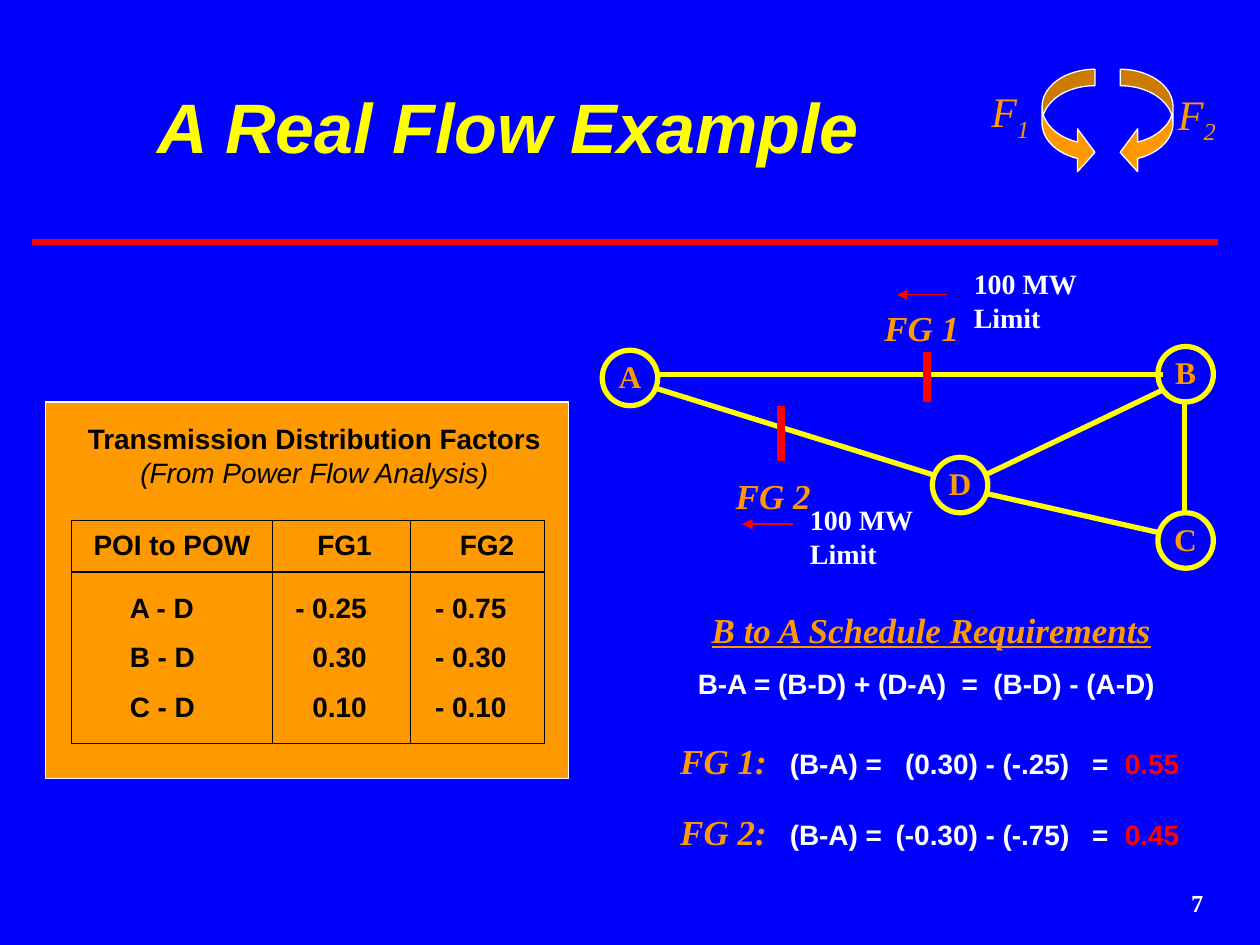
"""Build the slide "A Real Flow Example": network diagram, factor table and schedule equations."""
import dataclasses
import pptx
import pptx.util
import pptx.dml.color
import pptx.enum.shapes
import pptx.enum.text
import pptx.oxml
import pptx.oxml.ns

PX = 9144
SHAPE = pptx.enum.shapes.MSO_SHAPE
ANCHOR = pptx.enum.text.MSO_ANCHOR
LEFT, CENTER, RIGHT = (pptx.enum.text.PP_ALIGN.LEFT, pptx.enum.text.PP_ALIGN.CENTER,
                       pptx.enum.text.PP_ALIGN.RIGHT)
NS = pptx.oxml.ns.nsdecls("a")
RGB = pptx.dml.color.RGBColor.from_string


@dataclasses.dataclass(frozen=True)
class Theme:
    blue: str = "0000FF"
    yellow: str = "FFFF00"
    orange: str = "FF9900"
    red: str = "FF0000"
    white: str = "FFFFFF"
    black: str = "000000"
    sans: str = "Arial"
    serif: str = "Times New Roman"
    title: int = 40
    symbol: int = 24
    heading: int = 20
    node: int = 18
    body: int = 16
    number: int = 14


T = Theme()
# Each style is font, size, colour, then b, i, u or s for bold, italic, underline, subscript
TITLE = (T.sans, T.title, T.yellow, "bi")
SYMBOL = (T.serif, T.symbol, T.orange, "i")
SUBSCRIPT = (T.serif, T.symbol, T.orange, "is")
GATE = (T.serif, T.heading, T.orange, "bi")
HEADING = (T.serif, T.heading, T.orange, "biu")
NODE = (T.serif, T.node, T.orange, "b")
LIMIT = (T.serif, T.body, T.white, "b")
NUMBER = (T.serif, T.number, T.white, "b")
TABLE = (T.sans, T.body, T.black, "b")
SOURCE = (T.sans, T.body, T.black, "i")
EQUATION = (T.sans, T.body, T.white, "b")
RESULT = (T.sans, T.body, T.red, "b")


def write(tf, align, *paragraphs):
    for n, runs in enumerate(paragraphs):
        p = tf.add_paragraph() if n else tf.paragraphs[0]
        p.alignment = align
        for text, (font, size, color, flags) in runs:
            r = p.add_run()
            r.text = text
            r.font.name, r.font.size = font, pptx.util.Pt(size)
            r.font.color.rgb = RGB(color)
            r.font.bold, r.font.italic = "b" in flags, "i" in flags
            if "u" in flags:
                r.font.underline = True
            if "s" in flags:
                r.font._element.set("baseline", "-25000")


def line(x1, y1, x2, y2, color, width, arrow=False):
    c = s.shapes.add_connector(pptx.enum.shapes.MSO_CONNECTOR.STRAIGHT,
                               x1 * PX, y1 * PX, x2 * PX, y2 * PX)
    c.line.color.rgb, c.line.width = RGB(color), pptx.util.Pt(width)
    if arrow:
        c.line._get_or_add_ln().append(pptx.oxml.parse_xml(f'<a:tailEnd {NS} type="triangle"/>'))
    c._element.spPr.append(pptx.oxml.parse_xml(f"<a:effectLst {NS}/>"))


prs = pptx.Presentation()
prs.slide_width, prs.slide_height = 1000 * PX, 750 * PX
s = prs.slides.add_slide(prs.slide_layouts[5])
s.background.fill.solid()
s.background.fill.fore_color.rgb = RGB(T.blue)

title = s.shapes.title
title.left, title.top, title.width, title.height = 41 * PX, 22 * PX, 725 * PX, 155 * PX
title.text_frame.vertical_anchor = ANCHOR.MIDDLE
write(title.text_frame, CENTER, [("A Real Flow Example", TITLE)])
line(25, 192, 967, 192, T.red, 3)

solids = [
    (SHAPE.CURVED_RIGHT_ARROW, 827, 55, 42, 83, T.orange, T.white, 0.75, ""),
    (SHAPE.CURVED_LEFT_ARROW, 889, 55, 42, 83, T.orange, T.white, 0.75, ""),
    (SHAPE.RECTANGLE, 36, 319, 415, 299, T.orange, T.white, 0.75, ""),
]
for name, x, y in [("A", 478, 278), ("C", 919, 407), ("B", 919, 275), ("D", 740, 363)]:
    solids.append((SHAPE.OVAL, x, y, 44, 44, T.blue, T.yellow, 3, name))
for kind, x, y, w, h, fill, edge, width, name in solids:
    sp = s.shapes.add_shape(kind, x * PX, y * PX, w * PX, h * PX)
    sp.shadow.inherit = False
    sp.fill.solid()
    sp.fill.fore_color.rgb = RGB(fill)
    sp.line.color.rgb, sp.line.width = RGB(edge), pptx.util.Pt(width)
    if kind in (SHAPE.CURVED_RIGHT_ARROW, SHAPE.CURVED_LEFT_ARROW):
        for n, value in enumerate((0.31, 0.81, 0.33)):
            sp.adjustments[n] = value
    if name:
        tf = sp.text_frame
        tf.margin_left = tf.margin_right = tf.margin_top = 0
        tf.margin_bottom = 3 * PX
        tf.vertical_anchor = ANCHOR.MIDDLE
        write(tf, CENTER, [(name, NODE)])

for ends in [(523, 297, 923, 297), (520, 308, 741, 377), (784, 376, 924, 309),
             (940, 319, 940, 406), (784, 392, 921, 423)]:
    line(*ends, T.yellow, 3)
for x, top, bottom in [(620, 322, 366), (736, 279, 319)]:
    line(x, top, x, bottom, T.red, 4.5)
for x, y in [(752, 234), (629, 416)]:
    line(x, y, x - 40, y, T.red, 0.75, arrow=True)

limit = [[("100 MW", LIMIT)], [("Limit", LIMIT)]]
boxes = [
    (777, 63, 75, 56, LEFT, [[("F", SYMBOL), ("1", SUBSCRIPT)]]),
    (925, 65, 75, 56, LEFT, [[("F", SYMBOL), ("2", SUBSCRIPT)]]),
    (692, 238, 89, 44, LEFT, [[("FG 1", GATE)]]),
    (574, 372, 89, 44, LEFT, [[("FG 2", GATE)]]),
    (763, 207, 131, 64, LEFT, limit),
    (633, 394, 131, 64, LEFT, limit),
    (49, 330, 401, 64, CENTER, [[("Transmission Distribution Factors", TABLE)],
                                [("(From Power Flow Analysis)", SOURCE)]]),
    (555, 478, 390, 44, LEFT, [[("B to A Schedule Requirements", HEADING)]]),
    (544, 524, 400, 37, LEFT, [[("B-A = (B-D) + (D-A)  =  (B-D) - (A-D)", EQUATION)]]),
    (757, 700, 208, 50, RIGHT, [[("7", NUMBER)]]),
]
for y, gate, terms, result in [(582, "FG 1:", "(0.30) - (-.25)", "0.55"),
                               (638, "FG 2:", "(-0.30) - (-.75)", "0.45")]:
    boxes.append((530, y, 427, 44, LEFT, [[
        (gate, GATE), (f"\t(B-A) =\t{terms}\t=\t", EQUATION), (result, RESULT)]]))
tabs = "".join(f'<a:tab pos="{x * PX}" algn="{side}"/>'
               for x, side in [(87, "l"), (309, "r"), (327, "l"), (353, "l")])
for x, y, w, h, align, paragraphs in boxes:
    tf = s.shapes.add_textbox(x * PX, y * PX, w * PX, h * PX).text_frame
    tf.word_wrap = True
    write(tf, align, *paragraphs)
    if "\t" in tf.text:
        tf.paragraphs[0]._p.get_or_add_pPr().append(
            pptx.oxml.parse_xml(f"<a:tabLst {NS}>{tabs}</a:tabLst>"))

rows = [("POI to POW", "FG1", "FG2"), ("A - D", "- 0.25", "- 0.75"),
        ("B - D", "0.30", "- 0.30"), ("C - D", "0.10", "- 0.10")]
widths, heights = (159, 110, 106), (41, 49, 39, 48)
table = s.shapes.add_table(4, 3, 57 * PX, 413 * PX, sum(widths) * PX, sum(heights) * PX).table
table.first_row = table.horz_banding = False
for col, w in zip(table.columns, widths):
    col.width = w * PX
for i, (row, h) in enumerate(zip(rows, heights)):
    table.rows[i].height = h * PX
    for j, text in enumerate(row):
        cell = table.cell(i, j)
        cell.fill.solid()
        cell.fill.fore_color.rgb = RGB(T.orange)
        cell.vertical_anchor = ANCHOR.MIDDLE
        cell.margin_left = ((0, 5, 15)[j] if i == 0 else (46, 0, 0)[j]) * PX
        cell.margin_right = (0 if i == 0 else (0, 35, 30)[j]) * PX
        cell.margin_top = (10 if i == 1 else 0) * PX
        cell.margin_bottom = (9 if i == 3 else 0) * PX
        write(cell.text_frame, CENTER if i == 0 else (LEFT, RIGHT, RIGHT)[j], [(text, TABLE)])
        drawn = {"L": True, "R": True, "T": i < 2, "B": i in (0, 3)}
        for n, (side, shown) in enumerate(drawn.items()):
            paint = (f'<a:solidFill><a:srgbClr val="{T.black}"/></a:solidFill>'
                     if shown else "<a:noFill/>")
            cell._tc.get_or_add_tcPr().insert(n, pptx.oxml.parse_xml(
                f'<a:ln{side} {NS} w="9525">{paint}</a:ln{side}>'))

prs.save("out.pptx")
